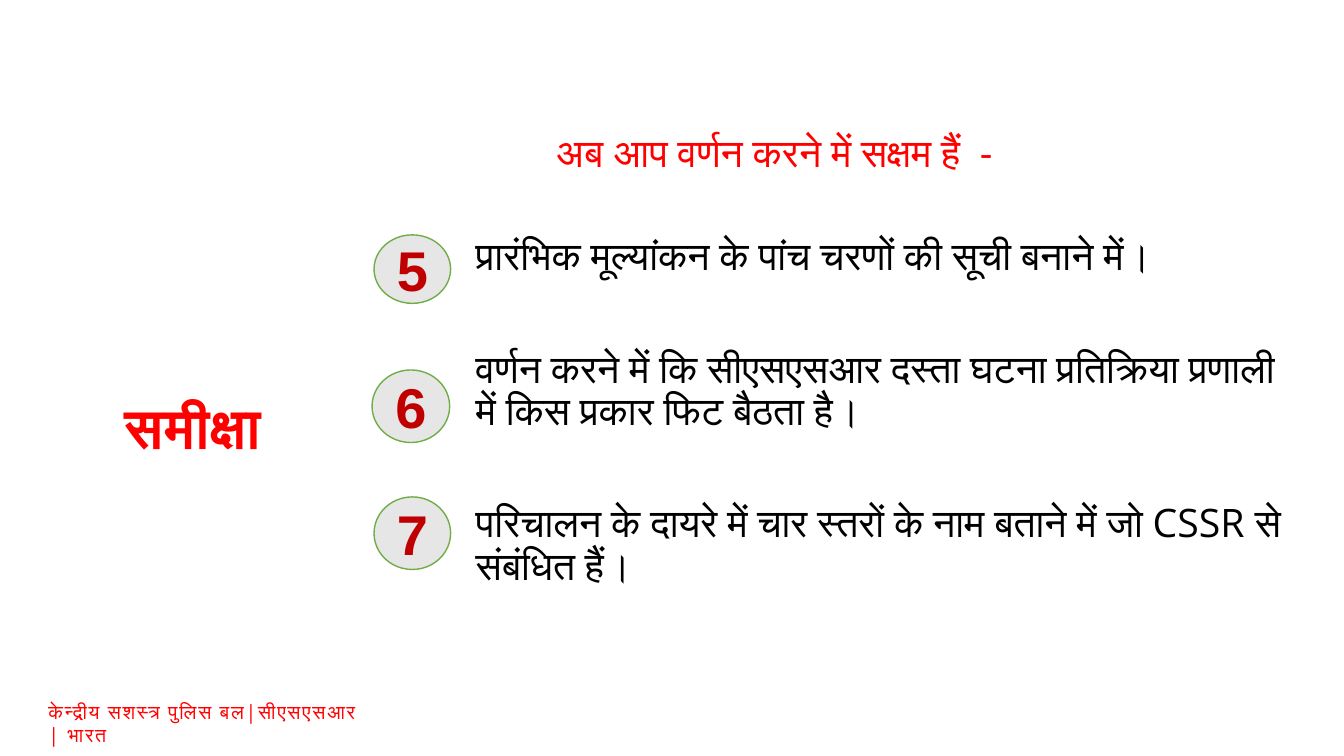
from pptx import Presentation
from pptx.dml.color import RGBColor
from pptx.enum.shapes import MSO_SHAPE as SHAPE
from pptx.enum.text import MSO_ANCHOR as ANCHOR, PP_ALIGN as ALIGN
from pptx.util import Inches, Pt

RED = RGBColor(0xFF, 0x00, 0x00)
DARK_RED = RGBColor(0xC0, 0x00, 0x00)
GREEN = RGBColor(0x70, 0xAD, 0x47)
GREY = RGBColor(0xE7, 0xE6, 0xE6)
WHITE = RGBColor(0xFF, 0xFF, 0xFF)
BLACK = RGBColor(0x00, 0x00, 0x00)

TITLE = "समीक्षा"
INTRO = "अब आप वर्णन करने में सक्षम हैं  -"
FOOTER = "केन्द्रीय सशस्त्र पुलिस बल|सीएसएसआर | भारत"
GOALS = [
    "प्रारंभिक मूल्यांकन के पांच चरणों की सूची बनाने में।",
    "वर्णन करने में कि सीएसएसआर दस्ता घटना प्रतिक्रिया प्रणाली में किस प्रकार फिट बैठता है।",
    "परिचालन के दायरे में चार स्तरों के नाम बताने में जो CSSR से संबंधित हैं।",
]
# Number badges: left, top, width, height
BADGES = {
    "5": (3.71, 2.33, 0.76, 0.68),
    "6": (3.69, 3.67, 0.77, 0.72),
    "7": (3.71, 4.93, 0.76, 0.72),
}


def inches(box):
    return [Inches(v) for v in box]


def set_frame(tf, side=0.1, edge=0.05, anchor=ANCHOR.TOP):
    tf.word_wrap = True
    tf.vertical_anchor = anchor
    tf.margin_left = tf.margin_right = Inches(side)
    tf.margin_top = tf.margin_bottom = Inches(edge)


def set_text(p, text, size, color, name="Open Sans", bold=False, align=ALIGN.LEFT):
    p.text = text
    p.alignment = align
    p.font.name, p.font.size, p.font.bold = name, Pt(size), bold
    p.font.color.rgb = color


def add_panel(slide, kind, box, fill):
    sp = slide.shapes.add_shape(kind, *inches(box))
    sp.shadow.inherit = False
    sp.fill.solid()
    sp.fill.fore_color.rgb = fill
    return sp


def add_title(slide, box):
    title = slide.shapes.title
    title.left, title.top, title.width, title.height = inches(box)
    set_frame(title.text_frame, 0.04, 0.04)
    p = title.text_frame.paragraphs[0]
    set_text(p, TITLE, 40, RED, bold=True, align=ALIGN.CENTER)
    p.line_spacing = 1.0


def add_footer(slide, box):
    tf = slide.shapes.add_textbox(*inches(box)).text_frame
    set_frame(tf, 0.04, 0.04)
    p = tf.paragraphs[0]
    set_text(p, FOOTER, 14, RED)
    p.runs[0].font._element.set("spc", "120")  # letter spacing


def add_intro(slide, box):
    sp = add_panel(slide, SHAPE.ROUNDED_RECTANGLE, box, WHITE)
    sp.line.fill.background()
    # Left inset clears the rounded corner
    set_frame(sp.text_frame)
    p = sp.text_frame.paragraphs[0]
    set_text(p, INTRO, 28, RED)
    p.line_spacing = 1.5
    p._p.get_or_add_pPr().set("marL", str(Inches(0.12)))


def add_goals(slide, box):
    tf = slide.shapes.add_textbox(*inches(box)).text_frame
    set_frame(tf)
    for i, goal in enumerate(GOALS):
        p = tf.add_paragraph() if i else tf.paragraphs[0]
        set_text(p, goal, 28, BLACK)
        p.line_spacing = 0.9
        if i:
            p.space_before = Pt(50)


def add_badge(slide, number, box):
    sp = add_panel(slide, SHAPE.OVAL, box, GREY)
    sp.line.color.rgb = GREEN
    sp.line.width = Pt(1)
    set_frame(sp.text_frame, anchor=ANCHOR.MIDDLE)
    set_text(sp.text_frame.paragraphs[0], number, 40, DARK_RED, "Arial", True, ALIGN.CENTER)


def main():
    prs = Presentation()
    prs.slide_width, prs.slide_height = Inches(13.33), Inches(7.5)
    slide = prs.slides.add_slide(prs.slide_layouts[5])

    add_footer(slide, (0.44, 6.9, 3.32, 0.56))
    add_title(slide, (0.21, 3.85, 3.41, 0.76))
    add_intro(slide, (4.99, 0.68, 6.96, 6.3))
    add_goals(slide, (4.62, 2.3, 8.27, 4.88))
    for number, box in BADGES.items():
        add_badge(slide, number, box)

    prs.save("out.pptx")


if __name__ == "__main__":
    main()
